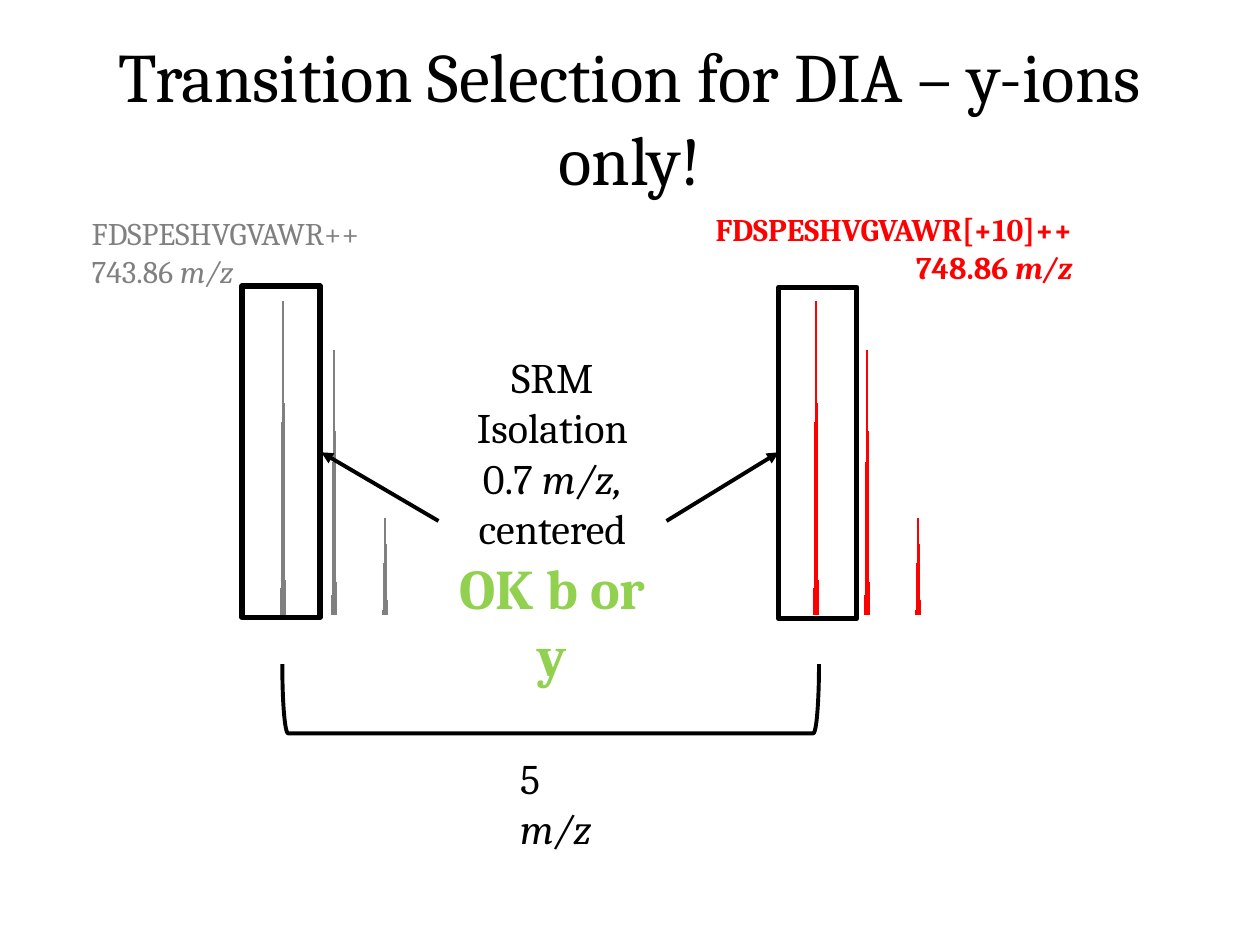
from pptx import Presentation
from pptx.dml.color import RGBColor
from pptx.enum.shapes import MSO_CONNECTOR, MSO_SHAPE
from pptx.enum.text import MSO_ANCHOR, PP_ALIGN
from pptx.oxml.ns import qn
from pptx.util import Inches, Pt
from lxml import etree

LEFT, CENTER, RIGHT = PP_ALIGN.LEFT, PP_ALIGN.CENTER, PP_ALIGN.RIGHT
TOP, MIDDLE = MSO_ANCHOR.TOP, MSO_ANCHOR.MIDDLE
STRAIGHT = MSO_CONNECTOR.STRAIGHT
RECT, BRACKET = MSO_SHAPE.RECTANGLE, MSO_SHAPE.RIGHT_BRACKET

BLACK = RGBColor(0x00, 0x00, 0x00)
GRAY = RGBColor(0x80, 0x80, 0x80)
RED = RGBColor(0xFF, 0x00, 0x00)
GREEN = RGBColor(0x92, 0xD0, 0x50)

FONT = "Cambria"
BASE = 4.88
PEAKS = (
    (4.67, 4.15, 3.35, 2.5, 2.39, 3.2, 4, 4.6, 4.8),
    (4.72, 4.33, 3.67, 2.96, 2.78, 3.42, 4.08, 4.62, 4.81),
    (4.84, 4.71, 4.47, 4.21, 4.11, 4.32, 4.56, 4.76, 4.85),
)


def add_text(slide, box, lines, size=24, color=BLACK, bold=False, align=LEFT, anchor=TOP):
    """Add a text box; each line is a list of (text, format overrides) runs."""
    frame = slide.shapes.add_textbox(*map(Inches, box)).text_frame
    frame.word_wrap = True
    frame.vertical_anchor = anchor
    for i, line in enumerate(lines):
        para = frame.add_paragraph() if i else frame.paragraphs[0]
        para.alignment = align
        for text, style in line:
            run = para.add_run()
            run.text = text
            font = run.font
            font.name = FONT
            font.size = Pt(style.get("size", size))
            font.bold = style.get("bold", bold)
            font.italic = style.get("italic", False)
            font.color.rgb = style.get("color", color)


def add_line(slide, start, end, color, width, arrow=False):
    """Draw a straight line, with an arrowhead at its end if asked."""
    line = slide.shapes.add_connector(STRAIGHT, *map(Inches, start + end))
    line.line.color.rgb = color
    line.line.width = Pt(width)
    props = line._element.spPr
    if arrow:
        etree.SubElement(props.find(qn("a:ln")), qn("a:tailEnd"), type="triangle")
    etree.SubElement(props, qn("a:effectLst"))


def add_frame(slide, kind, box, width):
    """Add an unfilled black outline shape."""
    shape = slide.shapes.add_shape(kind, *map(Inches, box))
    shape.shadow.inherit = False
    shape.fill.background()
    shape.line.color.rgb = BLACK
    shape.line.width = Pt(width)
    return shape


def add_peaks(slide, left, color):
    """Draw three isotope peaks as bundles of vertical lines."""
    for i, peak in enumerate(PEAKS):
        for j, top in enumerate(peak):
            x = left + i * 0.405 + j * 0.0045
            add_line(slide, (x, top), (x, BASE), color, 1)


def add_label(slide, box, name, mass, **style):
    """Name a peptide above its m/z value."""
    lines = [[(name, {})], [(mass + " ", {}), ("m/z", {"italic": True})]]
    add_text(slide, box, lines, size=18, **style)


def add_span(slide, box):
    """Draw the bracket below the peaks and its m/z distance."""
    left, top, width, height = box
    x, y = left + (width - height) / 2, top + (height - width) / 2
    add_frame(slide, BRACKET, (x, y, height, width), 2.25).rotation = 90
    add_text(slide, (4.03, top + 0.65, 0.96, 0.5), [[("5 ", {}), ("m/z", {"italic": True})]])


def add_note(slide, box):
    """Place the isolation note and its arrows to both windows."""
    left, top, width, height = box
    lines = [
        [("SRM Isolation", {})],
        [("0.7 ", {}), ("m/z, ", {"italic": True}), ("centered", {})],
        [("OK b or y", {"size": 32, "color": GREEN, "bold": True})],
    ]
    add_text(slide, box, lines, align=CENTER)
    mid = top + height / 2
    for start, end in ((left, 2.55), (left + width, 6.18)):
        add_line(slide, (start, mid), (end, 3.59), BLACK, 2.25, arrow=True)


def main():
    """Build and save the slide."""
    deck = Presentation()
    deck.slide_width, deck.slide_height = Inches(10), Inches(7.5)
    slide = deck.slides.add_slide(deck.slide_layouts[6])
    add_text(slide, (0.5, 0.3, 9, 1.25),
             [[("Transition Selection for DIA – y-ions only!", {})]],
             size=39.6, align=CENTER, anchor=MIDDLE)
    add_peaks(slide, 6.46, RED)
    add_peaks(slide, 2.23, GRAY)
    add_label(slide, (5.12, 1.62, 3.49, 0.71), "FDSPESHVGVAWR[+10]++", "748.86",
              color=RED, bold=True, align=RIGHT)
    add_label(slide, (0.63, 1.65, 2.8, 0.71), "FDSPESHVGVAWR++", "743.86", color=GRAY)
    add_span(slide, (2.24, 5.27, 4.26, 0.55))
    add_note(slide, (3.48, 2.74, 1.81, 2.79))
    for left, top in ((1.92, 2.27), (6.18, 2.28)):
        add_frame(slide, RECT, (left, top, 0.62, 2.63), 3)
    deck.save("out.pptx")


if __name__ == "__main__":
    main()
